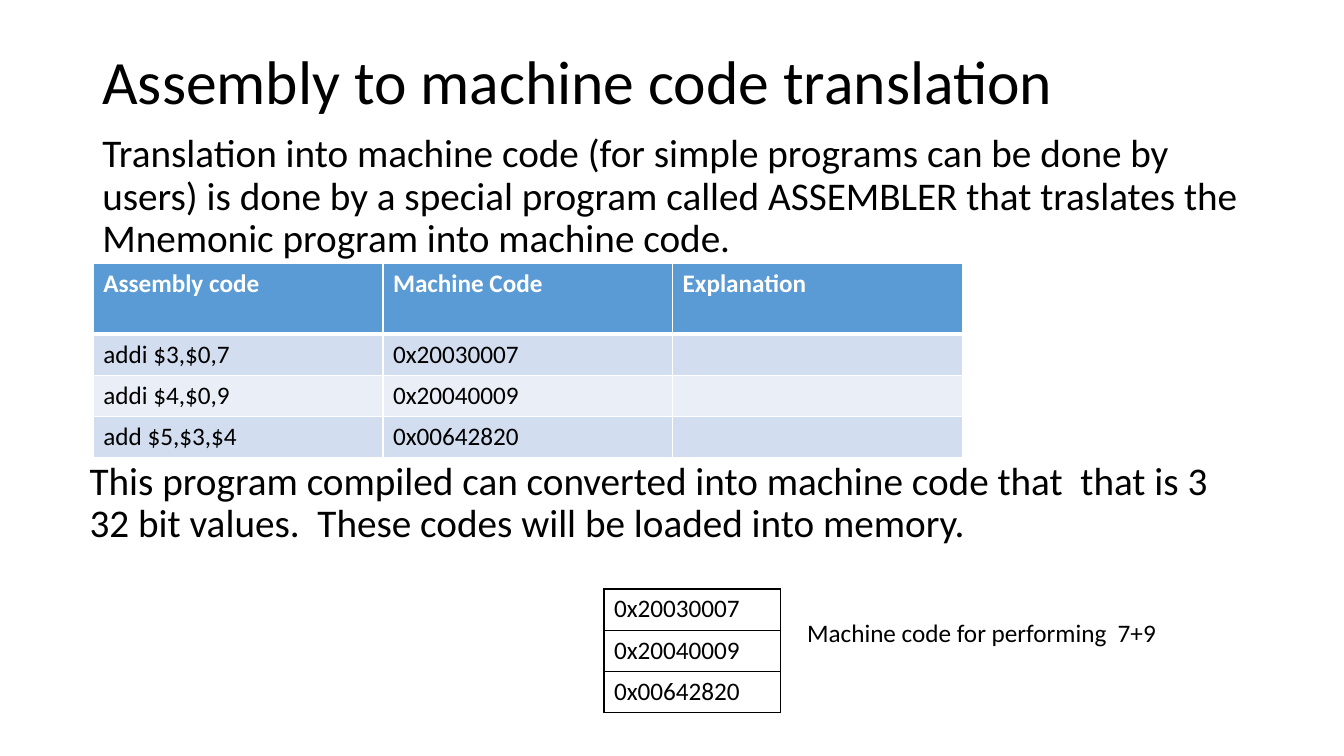
from lxml import etree
from pptx import Presentation
from pptx.dml.color import RGBColor
from pptx.enum.text import MSO_ANCHOR
from pptx.oxml.ns import qn
from pptx.util import Cm, Pt

TOP, MIDDLE = MSO_ANCHOR.TOP, MSO_ANCHOR.MIDDLE

COLORS = {
    "text": "000000",
    "white": "FFFFFF",
    "header": "5B9BD5",
    "band_dark": "D2DEEF",
    "band_light": "EAEFF7",
}

MACHINE_CODE = ["0x20030007", "0x20040009", "0x00642820"]
ASSEMBLY_CODE = ["addi $3,$0,7", "addi $4,$0,9", "add $5,$3,$4"]
ROW_HEIGHT = 1.04

BODY = {"line_spacing": 0.9, "space_before": Pt(10)}


class SlideBuilder:
    """Holds the text style and the slide being filled; lengths are in cm."""

    def __init__(self, slide, font_name="Calibri"):
        self.slide = slide
        self.font_name = font_name

    def add_run(self, paragraph, text, size=18, color="text", bold=False):
        run = paragraph.add_run()
        run.text = text
        values = {"name": self.font_name, "size": Pt(size), "bold": bold}
        for name, value in values.items():
            setattr(run.font, name, value)
        run.font.color.rgb = RGBColor.from_string(COLORS[color])

    def add_text(self, box, text, size=18, anchor=TOP, paragraph_format=None):
        shape = self.slide.shapes.add_textbox(*map(Cm, box))
        frame = shape.text_frame
        frame.word_wrap = True
        frame.vertical_anchor = anchor
        paragraph = frame.paragraphs[0]
        for name, value in (paragraph_format or {}).items():
            setattr(paragraph, name, value)
        self.add_run(paragraph, text, size)

    def add_table(self, left, top, column_width, row_heights, rows, fills,
                  line_color, header=False):
        """Add a table with one fill per row; a fill of None is transparent."""
        column_count = len(rows[0])
        table = self.slide.shapes.add_table(
            len(rows), column_count, Cm(left), Cm(top),
            Cm(column_width * column_count), Cm(sum(row_heights))).table
        table.first_row = header
        table.horz_banding = False
        for column in table.columns:
            column.width = Cm(column_width)
        for row_index, texts in enumerate(rows):
            table.rows[row_index].height = Cm(row_heights[row_index])
            is_header = header and row_index == 0
            widths = {
                "L": 1,
                "R": 1,
                "T": 3 if header and row_index == 1 else 1,
                "B": 3 if is_header else 1,
            }
            for column_index, text in enumerate(texts):
                cell = table.cell(row_index, column_index)
                self.fill_cell(cell, fills[row_index])
                self.set_borders(cell, widths, line_color)
                if text:
                    self.add_run(cell.text_frame.paragraphs[0], text,
                                 color="white" if is_header else "text",
                                 bold=is_header)

    def fill_cell(self, cell, color):
        if color is None:
            cell.fill.background()
        else:
            cell.fill.solid()
            cell.fill.fore_color.rgb = RGBColor.from_string(COLORS[color])

    def set_borders(self, cell, widths, color):
        properties = cell._tc.get_or_add_tcPr()
        for position, (side, width) in enumerate(widths.items()):
            line = etree.Element(qn(f"a:ln{side}"), w=str(Pt(width)))
            fill = etree.SubElement(line, qn("a:solidFill"))
            etree.SubElement(fill, qn("a:srgbClr"), val=COLORS[color])
            properties.insert(position, line)


def main():
    presentation = Presentation()
    presentation.slide_width = Cm(33.87)
    presentation.slide_height = Cm(19.05)
    blank_layout = presentation.slide_layouts[6]
    builder = SlideBuilder(presentation.slides.add_slide(blank_layout))

    builder.add_text((2.33, 1.01, 29.21, 2.24),
                     "Assembly to machine code translation",
                     size=44, anchor=MIDDLE,
                     paragraph_format={"line_spacing": 0.9})
    builder.add_text((2.33, 3.25, 29.21, 3.9),
                     "Translation into machine code (for simple programs can "
                     "be done by users) is done by a special program called "
                     "ASSEMBLER that traslates the Mnemonic program into "
                     "machine code.",
                     size=28, paragraph_format=BODY)

    code_rows = [["Assembly code", "Machine Code", "Explanation"]]
    code_rows += [[assembly, machine, ""]
                  for assembly, machine in zip(ASSEMBLY_CODE, MACHINE_CODE)]
    builder.add_table(2.35, 6.64, 7.3, [1.78] + [ROW_HEIGHT] * 3, code_rows,
                      ["header", "band_dark", "band_light", "band_dark"],
                      "white", header=True)

    builder.add_text((2.01, 11.51, 29.21, 3.9),
                     "This program compiled can converted into machine code "
                     "that  that is 3 32 bit values.  These codes will be "
                     "loaded into memory.",
                     size=28, paragraph_format=BODY)

    builder.add_table(15.22, 14.84, 4.45, [ROW_HEIGHT] * 3,
                      [[code] for code in MACHINE_CODE], [None] * 3, "text")
    builder.add_text((20.09, 15.42, 13.18, 1.03),
                     "Machine code for performing  7+9")

    presentation.save("out.pptx")


if __name__ == "__main__":
    main()
